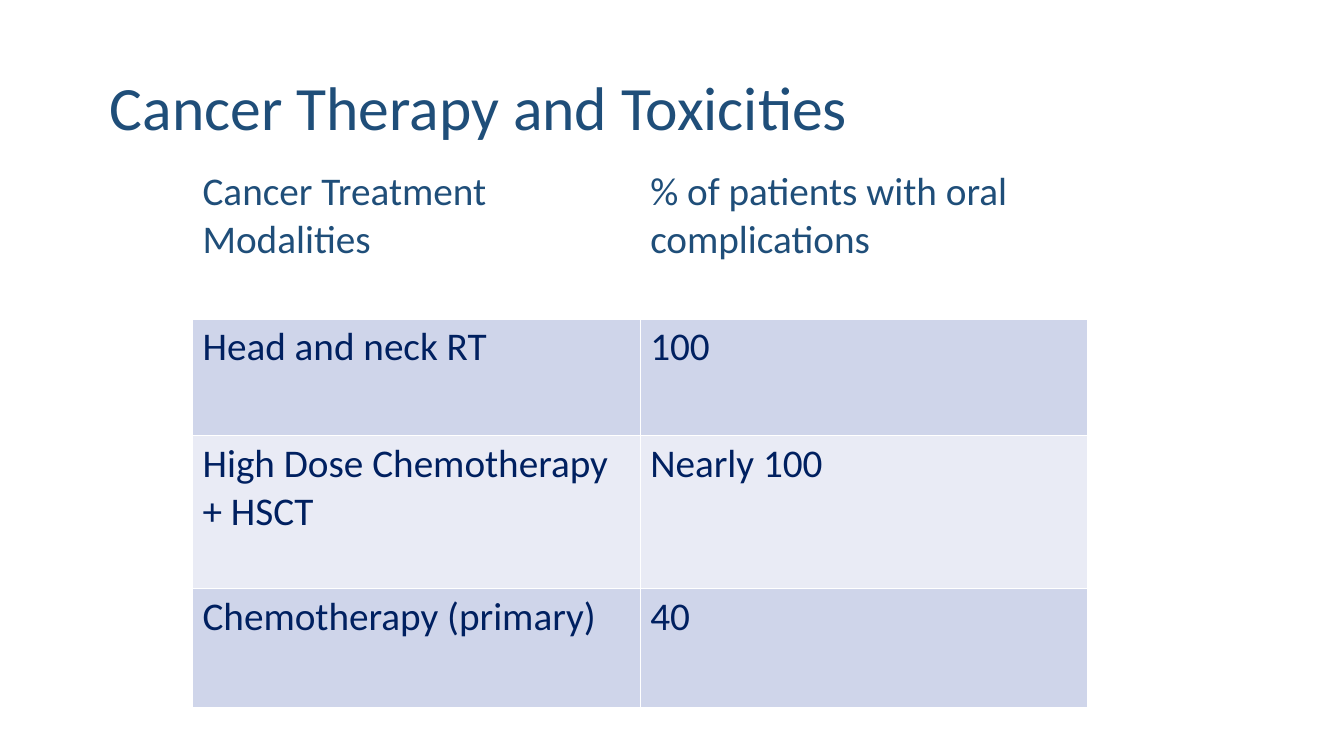
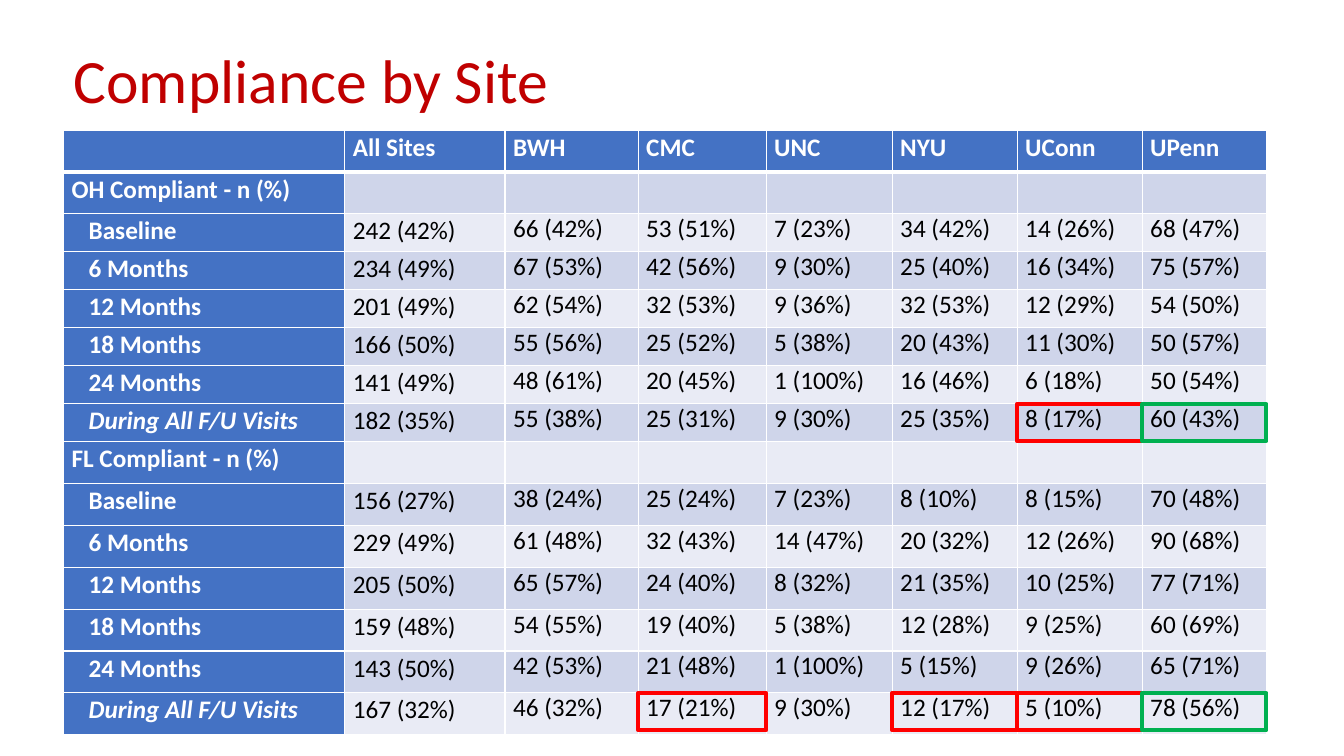
"""Build two table slides on therapy toxicities and compliance by site."""
from dataclasses import dataclass
from itertools import accumulate

from lxml import etree
from pptx import Presentation
from pptx import util as u
from pptx.dml.color import RGBColor
from pptx.enum import shapes, text
from pptx.oxml.ns import qn


@dataclass(frozen=True)
class Theme:
    font: str = "Calibri"
    title_size: int = 44
    large: int = 28
    small: int = 18
    teal: str = "1F4E79"
    navy: str = "002060"
    crimson: str = "C00000"
    blue: str = "4472C4"
    bands: tuple = ("CFD5EA", "E9EBF5")
    white: str = "FFFFFF"
    black: str = "000000"
    low: str = "FF0000"
    high: str = "00B050"


THEME = Theme()
TITLE_ONLY = 5

TOXICITIES = {
    "title": "Cancer Therapy and Toxicities",
    "title_box": (0.99, 0.57, 7.83, 1.05),
    "rows": [
        ("Cancer Treatment Modalities", "% of patients with oral complications"),
        ("Head and neck RT", "100"),
        ("High Dose Chemotherapy + HSCT", "Nearly 100"),
        ("Chemotherapy (primary)", "40"),
    ],
    "origin": (1.91, 1.62),
    "widths": [4.44, 4.44],
    "heights": [1.54, 1.16, 1.52, 1.18],
}

VISITS = ["Baseline", "6 Months", "12 Months", "18 Months", "24 Months", "During All F/U Visits"]
SITES = ["All Sites", "BWH", "CMC", "UNC", "NYU", "UConn", "UPenn"]
MEASURES = {
    "OH Compliant - n (%)": [
        [(242, 42), (66, 42), (53, 51), (7, 23), (34, 42), (14, 26), (68, 47)],
        [(234, 49), (67, 53), (42, 56), (9, 30), (25, 40), (16, 34), (75, 57)],
        [(201, 49), (62, 54), (32, 53), (9, 36), (32, 53), (12, 29), (54, 50)],
        [(166, 50), (55, 56), (25, 52), (5, 38), (20, 43), (11, 30), (50, 57)],
        [(141, 49), (48, 61), (20, 45), (1, 100), (16, 46), (6, 18), (50, 54)],
        [(182, 35), (55, 38), (25, 31), (9, 30), (25, 35), (8, 17), (60, 43)],
    ],
    "FL Compliant - n (%)": [
        [(156, 27), (38, 24), (25, 24), (7, 23), (8, 10), (8, 15), (70, 48)],
        [(229, 49), (61, 48), (32, 43), (14, 47), (20, 32), (12, 26), (90, 68)],
        [(205, 50), (65, 57), (24, 40), (8, 32), (21, 35), (10, 25), (77, 71)],
        [(159, 48), (54, 55), (19, 40), (5, 38), (12, 28), (9, 25), (60, 69)],
        [(143, 50), (42, 53), (21, 48), (1, 100), (5, 15), (9, 26), (65, 71)],
        [(167, 32), (46, 32), (17, 21), (9, 30), (12, 17), (5, 10), (78, 56)],
    ],
}
ROW_SHARES = [11] * 2 + [10] * 6 + [11] * 7
TABLE_HEIGHT = 6
COMPLIANCE = {
    "title": "Compliance by Site",
    "title_box": (0.63, 0.1, 11.5, 1.45),
    "origin": (0.63, 1.29),
    "widths": [2.79, 1.59, 1.32, 1.27, 1.25, 1.24, 1.24, 1.23],
    "heights": [TABLE_HEIGHT * share / sum(ROW_SHARES) for share in ROW_SHARES],
}
HIGHLIGHTS = [
    (7, "UConn", THEME.low), (14, "UConn", THEME.low), (14, "NYU", THEME.low),
    (14, "CMC", THEME.low), (7, "UPenn", THEME.high), (14, "UPenn", THEME.high),
]
HIGHLIGHT_HEIGHT = 0.37


def rgb(value):
    return RGBColor.from_string(value)


def set_font(paragraph, size, color, bold=False, italic=False):
    font = paragraph.font
    font.name, font.size, font.bold, font.italic = THEME.font, u.Pt(size), bold, italic
    font.color.rgb = rgb(color)


def add_titled_slide(presentation, content, color):
    slide = presentation.slides.add_slide(presentation.slide_layouts[TITLE_ONLY])
    title = slide.shapes.title
    title.left, title.top, title.width, title.height = map(u.Inches, content["title_box"])
    title.text_frame.text = content["title"]
    title.text_frame.vertical_anchor = text.MSO_ANCHOR.MIDDLE
    paragraph = title.text_frame.paragraphs[0]
    paragraph.alignment = text.PP_ALIGN.LEFT
    paragraph.line_spacing = 0.9
    set_font(paragraph, THEME.title_size, color)
    return slide


def set_borders(cell, bottom=1, top=1):
    properties = cell._tc.get_or_add_tcPr()
    sides = [("a:lnL", 1), ("a:lnR", 1), ("a:lnT", top), ("a:lnB", bottom)]
    for position, (tag, width) in enumerate(sides):
        line = etree.Element(qn(tag), w=str(u.Pt(width)))
        fill = etree.SubElement(line, qn("a:solidFill"))
        etree.SubElement(fill, qn("a:srgbClr"), val=THEME.white)
        properties.insert(position, line)


def add_grid(slide, content, rows, style_cell):
    widths, heights = content["widths"], content["heights"]
    size = (sum(widths), sum(heights))
    table = slide.shapes.add_table(
        len(rows), len(widths), *map(u.Inches, content["origin"] + size)).table
    table.first_row = table.horz_banding = False
    for column, width in zip(table.columns, widths):
        column.width = u.Inches(width)
    for row_index, (row, height) in enumerate(zip(rows, heights)):
        table.rows[row_index].height = u.Inches(height)
        for column_index, value in enumerate(row):
            cell = table.cell(row_index, column_index)
            cell.text = value
            style_cell(cell, row_index, column_index)
            set_borders(cell, bottom=1 if row_index else 3, top=3 if row_index == 1 else 1)


def style_toxicity(cell, row, column):
    if row:
        cell.fill.solid()
        cell.fill.fore_color.rgb = rgb(THEME.bands[(row - 1) % 2])
    else:
        cell.fill.background()
    set_font(cell.text_frame.paragraphs[0], THEME.large, THEME.navy if row else THEME.teal)


def style_compliance(cell, row, column):
    heading = row == 0 or column == 0
    visit = column == 0 and cell.text in VISITS
    cell.margin_left = u.Inches(0.25 if visit else 0.08)
    cell.margin_right = u.Inches(0.08)
    cell.margin_top = cell.margin_bottom = 0
    cell.fill.solid()
    cell.fill.fore_color.rgb = rgb(THEME.blue if heading else THEME.bands[(row - 1) % 2])
    paragraph = cell.text_frame.paragraphs[0]
    if row == 0 or column < 2:
        paragraph.line_spacing = 1.07
    set_font(paragraph, THEME.small, THEME.white if heading else THEME.black,
             bold=heading, italic=visit and cell.text == VISITS[-1])


def compliance_rows():
    rows = [[""] + SITES]
    for measure, results in MEASURES.items():
        rows.append([measure] + [""] * len(SITES))
        for visit, counts in zip(VISITS, results):
            rows.append([visit] + [f"{count} ({percent}%)" for count, percent in counts])
    return rows


def add_highlights(slide):
    left, top = COMPLIANCE["origin"]
    lefts = list(accumulate(COMPLIANCE["widths"], initial=left))
    tops = list(accumulate(COMPLIANCE["heights"], initial=top))
    for row, site, color in HIGHLIGHTS:
        column = SITES.index(site) + 1
        box = (lefts[column], tops[row], COMPLIANCE["widths"][column], HIGHLIGHT_HEIGHT)
        outline = slide.shapes.add_shape(shapes.MSO_SHAPE.RECTANGLE, *map(u.Inches, box))
        outline.shadow.inherit = False
        outline.fill.background()
        outline.line.color.rgb = rgb(color)
        outline.line.width = u.Pt(3)


def main():
    presentation = Presentation()
    presentation.slide_width, presentation.slide_height = u.Inches(13.33), u.Inches(7.5)
    toxicities = add_titled_slide(presentation, TOXICITIES, THEME.teal)
    add_grid(toxicities, TOXICITIES, TOXICITIES["rows"], style_toxicity)
    compliance = add_titled_slide(presentation, COMPLIANCE, THEME.crimson)
    add_grid(compliance, COMPLIANCE, compliance_rows(), style_compliance)
    add_highlights(compliance)
    presentation.save("out.pptx")


if __name__ == "__main__":
    main()
